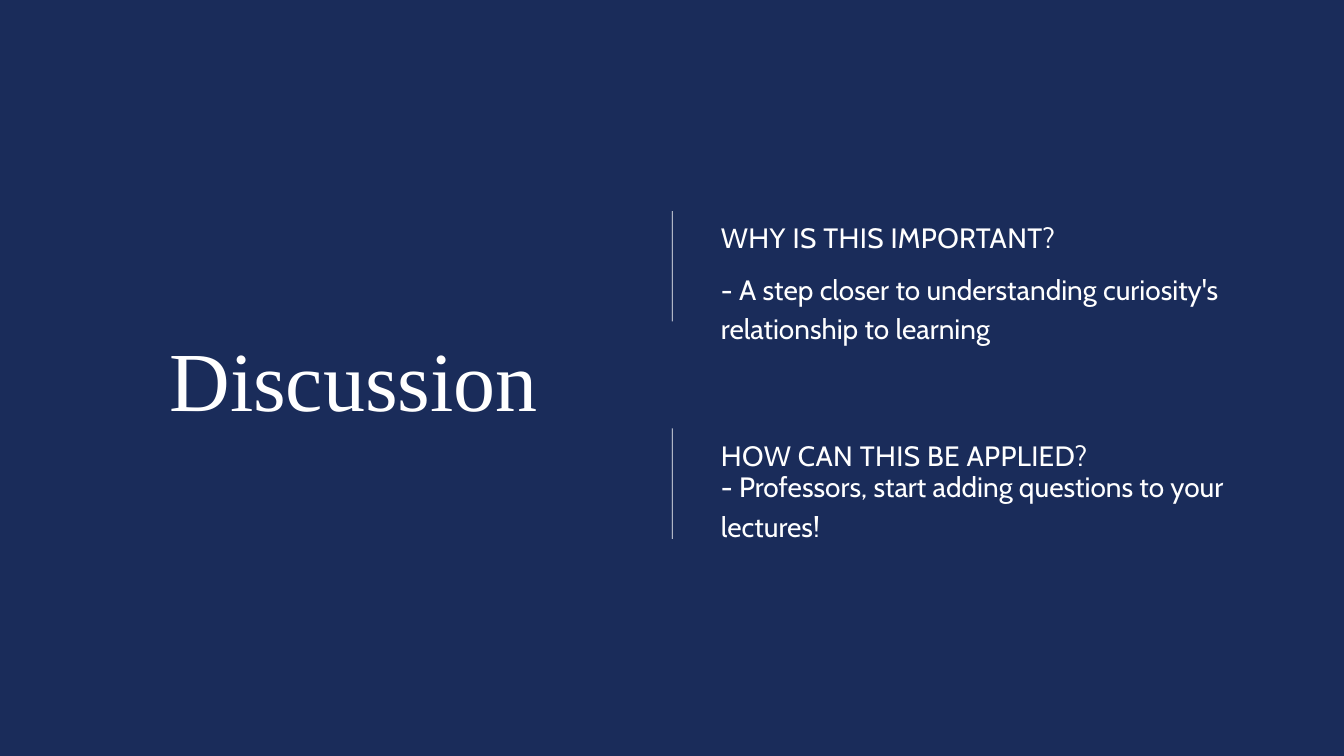
from lxml import etree
from pptx import Presentation
from pptx.dml.color import RGBColor
from pptx.enum.shapes import MSO_SHAPE
from pptx.enum.text import MSO_ANCHOR, MSO_AUTO_SIZE, PP_ALIGN
from pptx.oxml.ns import qn
from pptx.util import Cm, Pt

RECT = MSO_SHAPE.RECTANGLE
TOP = MSO_ANCHOR.TOP
FIXED = MSO_AUTO_SIZE.NONE
LEFT, CENTER = PP_ALIGN.LEFT, PP_ALIGN.CENTER

NAVY, WHITE = "1A2C5A", "FFFFFF"
COMPARE = 4  # layout with a title and two pairs of head and body

FRAME = {"margin_left": 0, "margin_right": 0, "margin_top": 0,
         "margin_bottom": 0, "word_wrap": True, "auto_size": FIXED,
         "vertical_anchor": TOP}
TITLE = {"name": "Times New Roman", "size": Pt(90), "bold": False}
TEXT = {"name": "Cabin", "size": Pt(30), "bold": False}

# top of the section, gap from its top to the body, head, body
PARTS = [
    (7.98, 2.11, "WHY IS THIS IMPORTANT?",
     "- A step closer to understanding curiosity's relationship to learning"),
    (16.2, 1.35, "HOW CAN THIS BE APPLIED?",
     "- Professors, start adding questions to your lectures!"),
]


def paint(fill, color):
    fill.solid()
    fill.fore_color.rgb = RGBColor.from_string(color)


def apply(item, style):
    for key, value in style.items():
        setattr(item, key, value)


def write(holder, box, text, font, lead, align=LEFT, track=0):
    """Move a placeholder to box (cm) and fill it with one plain paragraph."""
    holder.left, holder.top, holder.width, holder.height = map(Cm, box)
    frame = holder.text_frame
    apply(frame, FRAME)
    para = frame.paragraphs[0]
    apply(para, {"alignment": align, "line_spacing": Pt(lead),
                 "space_before": Pt(0)})
    props = para._p.get_or_add_pPr()
    props.set("marL", "0")
    props.set("indent", "0")
    etree.SubElement(props, qn("a:buNone"))
    run = para.add_run()
    run.text = text
    apply(run.font, font)
    paint(run.font.fill, WHITE)
    if track:
        run._r.get_or_add_rPr().set("spc", str(track))


def section(slide, box, gap, pair, head, body):
    """Draw a thin rule at the left of box, with a head and body beside it."""
    left, top, width, height = box
    rule = slide.shapes.add_shape(RECT, *map(Cm, (left, top, 0.03, height)))
    rule.shadow.inherit = False
    paint(rule.fill, WHITE)
    rule.line.fill.background()

    inset = 1.85
    x, wide = left + inset, width - inset
    write(pair[0], (x, top + 0.15, wide, 1.37), head, TEXT, 42, track=40)
    write(pair[1], (x, top + gap, wide, 2.84), body, TEXT, 42)


def main():
    deck = Presentation()
    deck.slide_width, deck.slide_height = Cm(50.8), Cm(28.58)
    slide = deck.slides.add_slide(deck.slide_layouts[COMPARE])
    paint(slide.background.fill, NAVY)

    title, *slots = slide.placeholders
    write(title, (4.19, 12.4, 18.36, 3.81), "Discussion", TITLE, 108, CENTER)
    pairs = zip(slots[::2], slots[1::2])
    for (top, gap, head, body), pair in zip(PARTS, pairs):
        section(slide, (25.4, top, 21.1, 4.17), gap, pair, head, body)
    deck.save("out.pptx")


if __name__ == "__main__":
    main()
